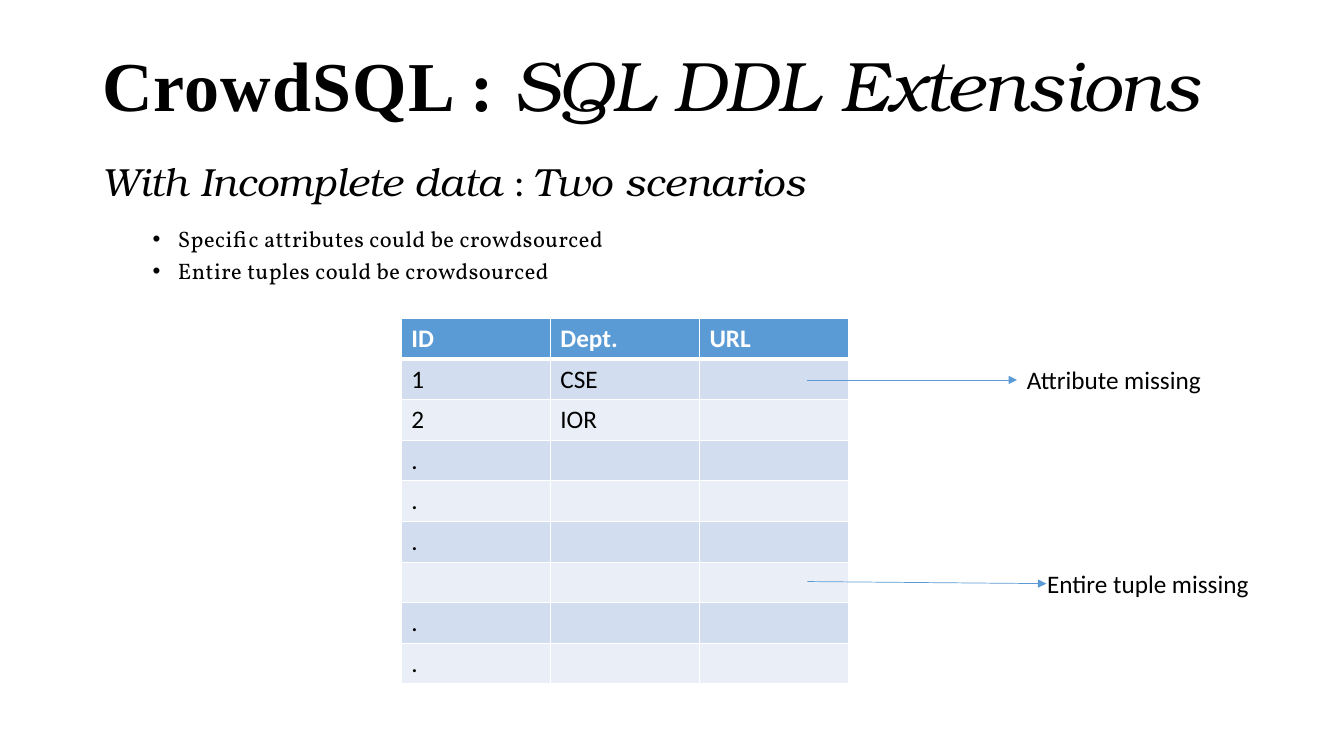
"""Build the CrowdSQL slide on DDL extensions for incomplete data."""
from lxml import etree
from pptx import Presentation
from pptx.dml.color import RGBColor
from pptx.enum import shapes, text
from pptx.oxml import ns
from pptx.util import Pt

BLACK = RGBColor(0x00, 0x00, 0x00)
WHITE = RGBColor(0xFF, 0xFF, 0xFF)
BLUE = RGBColor(0x5B, 0x9B, 0xD5)
BAND_DARK = RGBColor(0xD2, 0xDE, 0xEF)
BAND_LIGHT = RGBColor(0xEA, 0xEF, 0xF7)
SERIF, BONUM, BODY, SANS = "Times New Roman", "TeX Gyre Bonum", "Vollkorn", "Calibri"


def add_box(left, top, width, height, anchor=text.MSO_ANCHOR.TOP):
    frame = slide.shapes.add_textbox(Pt(left), Pt(top), Pt(width), Pt(height)).text_frame
    frame.word_wrap = True
    frame.vertical_anchor = anchor
    return frame


def add_run(paragraph, words, size, font, color=BLACK, bold=False, italic=False, spacing=0):
    run = paragraph.add_run()
    run.text = words
    run.font.size, run.font.name = Pt(size), font
    run.font.bold, run.font.italic = bold, italic
    run.font.color.rgb = color
    if spacing:
        run.font._element.set("spc", str(round(spacing * 100)))


presentation = Presentation()
presentation.slide_width, presentation.slide_height = Pt(960), Pt(540)
slide = presentation.slides.add_slide(presentation.slide_layouts[6])

title = add_box(66, 28.8, 828, 70, text.MSO_ANCHOR.MIDDLE).paragraphs[0]
title.line_spacing = 0.9
add_run(title, "CrowdSQL : ", 50, SERIF, bold=True, spacing=0.8)
for words, spacing in [("SQL ", -0.5), ("DDL ", 0.3), ("Extensions", -0.5)]:
    add_run(title, words, 50, BONUM, italic=True, spacing=spacing)

body = add_box(66, 112.5, 828, 373.5)
heading = body.paragraphs[0]
heading.line_spacing = 0.9
heading.space_before, heading.space_after = Pt(10), Pt(12)
add_run(heading, "With Incomplete data ", 28, BONUM, italic=True, spacing=0.2)
add_run(heading, ": ", 28, SANS)
add_run(heading, "Two scenarios", 28, BONUM, italic=True, spacing=0.2)

for words in ["Specific attributes could be crowdsourced", "Entire tuples could be crowdsourced"]:
    paragraph = body.add_paragraph()
    paragraph.level = 1
    paragraph.line_spacing = 0.9
    paragraph.space_before = Pt(5)
    add_run(paragraph, words, 16, BODY, spacing=0.4)
    properties = paragraph._p.get_or_add_pPr()
    properties.set("marL", str(Pt(54)))
    properties.set("indent", str(Pt(-18)))
    etree.SubElement(properties, ns.qn("a:buFont"), typeface="Arial")
    etree.SubElement(properties, ns.qn("a:buChar"), char="•")

rows = [["ID", "Dept.", "URL"], ["1", "CSE", ""], ["2", "IOR", ""]]
rows += [[mark, "", ""] for mark in [".", ".", ".", "", ".", "."]]
table = slide.shapes.add_table(len(rows), 3, Pt(286.6), Pt(227.5), Pt(319.5), Pt(261)).table
for column in table.columns:
    column.width = Pt(106.5)
for row_index, row in enumerate(rows):
    table.rows[row_index].height = Pt(29)
    header = row_index == 0
    for column_index, words in enumerate(row):
        cell = table.cell(row_index, column_index)
        paragraph = cell.text_frame.paragraphs[0]
        paragraph.font.size = Pt(18)
        if words:
            add_run(paragraph, words, 18, SANS, WHITE if header else BLACK, bold=header)
        cell_properties = cell._tc.get_or_add_tcPr()
        for side in "LRTB":
            thick = (header and side == "B") or (row_index == 1 and side == "T")
            border = etree.SubElement(cell_properties, ns.qn(f"a:ln{side}"), w=str(Pt(3 if thick else 1)))
            border_fill = etree.SubElement(border, ns.qn("a:solidFill"))
            etree.SubElement(border_fill, ns.qn("a:srgbClr"), val=str(WHITE))
        cell.fill.solid()
        cell.fill.fore_color.rgb = BLUE if header else BAND_DARK if row_index % 2 else BAND_LIGHT

callouts = [
    ("Entire tuple missing", 740.9, 402.5, 179.3, 415.4, 747.4, 416.9),
    ("Attribute missing", 726.5, 257, 167, 271.4, 726.5, 271.4),
]
for words, left, top, width, start_y, end_x, end_y in callouts:
    label = add_box(left, top, width, 28.8)
    add_run(label.paragraphs[0], words, 18, SANS)
    arrow = slide.shapes.add_connector(
        shapes.MSO_CONNECTOR.STRAIGHT, Pt(576.7), Pt(start_y), Pt(end_x), Pt(end_y))
    if end_x == left:
        arrow.end_connect(slide.shapes[-2], 1)
    arrow.line.color.rgb = BLUE
    arrow.line.width = Pt(0.5)
    etree.SubElement(arrow.line._get_or_add_ln(), ns.qn("a:tailEnd"), type="triangle")
    etree.SubElement(arrow._element.spPr, ns.qn("a:effectLst"))

presentation.save("out.pptx")
